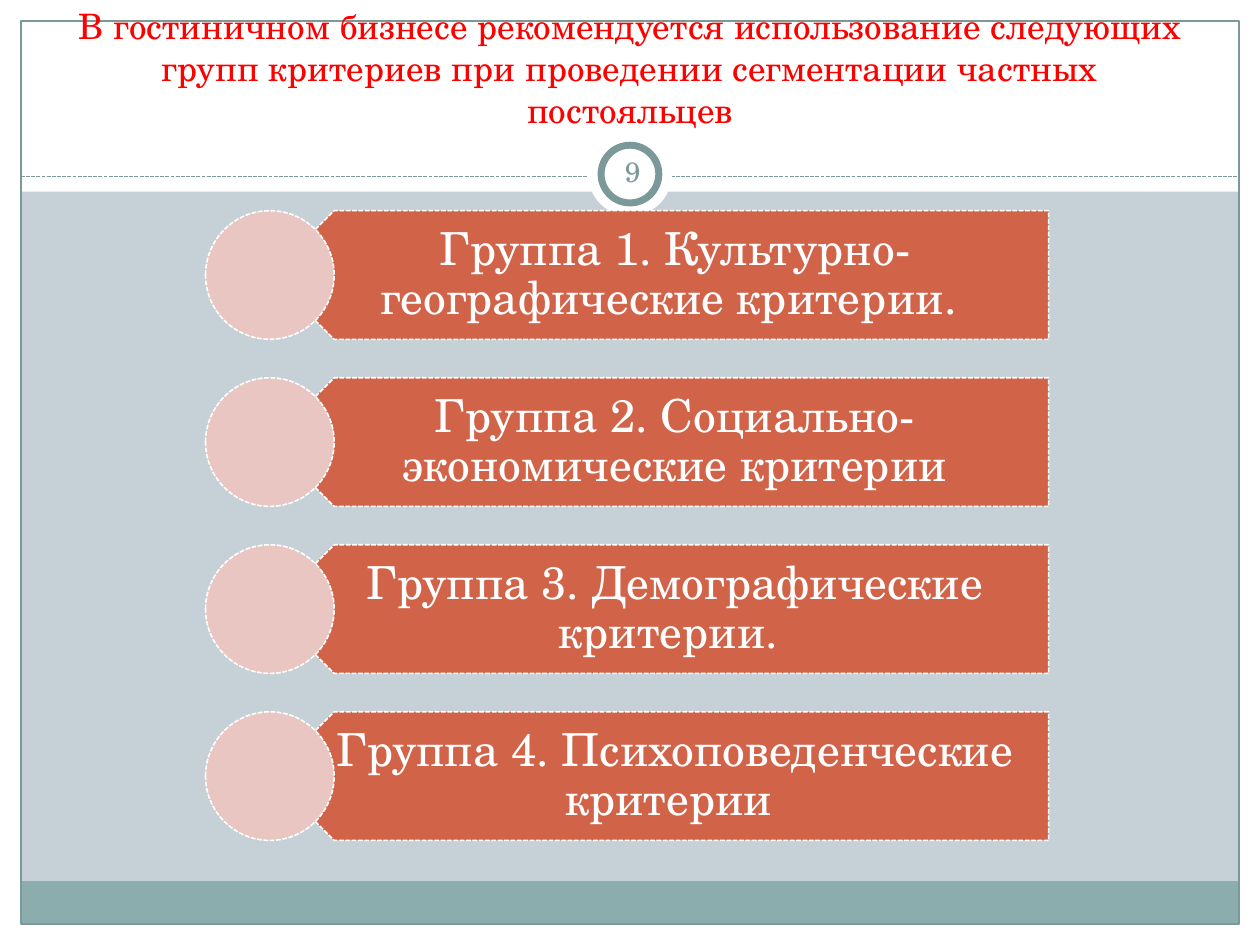
from dataclasses import dataclass

from lxml import etree
from pptx import Presentation
from pptx.dml.color import RGBColor
from pptx.enum.dml import MSO_LINE
from pptx.enum.shapes import MSO_CONNECTOR, MSO_SHAPE
from pptx.enum.text import MSO_ANCHOR, MSO_AUTO_SIZE, PP_ALIGN
from pptx.oxml.ns import qn
from pptx.util import Pt

RECTANGLE, OVAL, PENTAGON = MSO_SHAPE.RECTANGLE, MSO_SHAPE.OVAL, MSO_SHAPE.PENTAGON
STRAIGHT = MSO_CONNECTOR.STRAIGHT
DASHED = MSO_LINE.SQUARE_DOT
MIDDLE, BOTTOM = MSO_ANCHOR.MIDDLE, MSO_ANCHOR.BOTTOM
CENTER = PP_ALIGN.CENTER
NO_AUTOFIT = MSO_AUTO_SIZE.NONE
TITLE_ONLY = 5

TITLE = ("В гостиничном бизнесе рекомендуется использование следующих "
         "групп критериев при проведении сегментации частных постояльцев")
GROUPS = [
    "Группа 1. Культурно-географические критерии. ",
    "Группа 2. Социально-экономические критерии",
    "Группа 3. Демографические критерии. ",
    "Группа 4. Психоповеденческие критерии ",
]
PAGE_NUMBER = "9"


@dataclass(frozen=True)
class Theme:
    font: str = "TeX Gyre Schola"
    background: str = "C5D1D7"
    white: str = "FFFFFF"
    frame: str = "7C999A"
    footer: str = "8CADAE"
    title: str = "FF0000"
    banner: str = "D16349"
    disc: str = "E9C6C1"
    title_size: float = 20
    banner_size: float = 26
    number_size: float = 16


THEME = Theme()

# Lengths in points
WIDTH, HEIGHT = 720, 540
MARGIN = 12
HEADER_HEIGHT = 109.5
FOOTER_HEIGHT = 24.5
DIVIDER_Y = 101
BADGE_CENTER = (360, 99.5)
TITLE_BOX = (24, 18, 672, 60)
NUMBER_BOX = (343.5, 80.6, 36, 34.6)
FIRST_BANNER_TOP, BANNER_PITCH = 120.4, 95.45
BANNER_LEFT, BANNER_WIDTH, BANNER_HEIGHT = 154.2, 445, 73.5
BANNER_INSETS = (32.4, 7.9, 14.4, 7.9)
NUMBER_INSETS = (3.6, 3.6, 3.6, 3.6)


def color(code):
    return RGBColor.from_string(code)


def set_line(line, code, width, dashed=False):
    line.color.rgb = color(code)
    line.width = Pt(width)
    if dashed:
        line.dash_style = DASHED


def add_figure(slide, kind, box, fill=None, line=None):
    """Add a preset shape; line holds the arguments of set_line."""
    shape = slide.shapes.add_shape(kind, *map(Pt, box))
    shape.shadow.inherit = False
    if fill:
        shape.fill.solid()
        shape.fill.fore_color.rgb = color(fill)
    else:
        shape.fill.background()
    if line:
        set_line(shape.line, *line)
    else:
        shape.line.fill.background()
    return shape


def write_text(shape, text, size, code, anchor, insets=None, spacing=None):
    frame = shape.text_frame
    frame.word_wrap = True
    frame.auto_size = NO_AUTOFIT
    frame.vertical_anchor = anchor
    if insets:
        (frame.margin_left, frame.margin_top,
         frame.margin_right, frame.margin_bottom) = map(Pt, insets)
    paragraph = frame.paragraphs[0]
    paragraph.alignment = CENTER
    if spacing:
        paragraph.line_spacing = spacing
    run = paragraph.add_run()
    run.text = text
    run.font.name = THEME.font
    run.font.size = Pt(size)
    run.font.color.rgb = color(code)


def centered_square(center, side):
    return center[0] - side / 2, center[1] - side / 2, side, side


def add_frame(slide):
    inner_width, inner_height = WIDTH - 2 * MARGIN, HEIGHT - 2 * MARGIN
    white_edges = [
        (0, HEIGHT - MARGIN, WIDTH, MARGIN),
        (0, 0, WIDTH, HEADER_HEIGHT),
        (0, 0, MARGIN, HEIGHT),
        (WIDTH - MARGIN, 0, MARGIN, HEIGHT),
    ]
    for box in white_edges:
        add_figure(slide, RECTANGLE, box, THEME.white)
    footer_top = HEIGHT - MARGIN - FOOTER_HEIGHT
    add_figure(slide, RECTANGLE, (MARGIN, footer_top, inner_width, FOOTER_HEIGHT), THEME.footer)
    add_figure(slide, RECTANGLE, (MARGIN, MARGIN, inner_width, inner_height),
               line=(THEME.frame, 0.75))

    divider = slide.shapes.add_connector(
        STRAIGHT, Pt(MARGIN), Pt(DIVIDER_Y), Pt(WIDTH - MARGIN), Pt(DIVIDER_Y))
    set_line(divider.line, THEME.frame, 0.75, dashed=True)
    etree.SubElement(divider._element.spPr, qn("a:effectLst"))

    add_figure(slide, OVAL, centered_square(BADGE_CENTER, 48), THEME.white)
    add_figure(slide, OVAL, centered_square(BADGE_CENTER, 33), THEME.white, (THEME.frame, 4))


def add_title(slide):
    title = slide.shapes.title
    title.left, title.top, title.width, title.height = map(Pt, TITLE_BOX)
    write_text(title, TITLE, THEME.title_size, THEME.title, BOTTOM)
    slide.shapes._spTree.append(title._element)  # in front of the white header


def add_banner(slide, index, text):
    top = FIRST_BANNER_TOP + index * BANNER_PITCH
    box = (BANNER_LEFT, top, BANNER_WIDTH, BANNER_HEIGHT)
    outline = (THEME.white, 0.9, True)
    add_figure(slide, PENTAGON, box, THEME.banner, outline).rotation = 180
    label = slide.shapes.add_textbox(*map(Pt, box))
    write_text(label, text, THEME.banner_size, THEME.white, MIDDLE, BANNER_INSETS, 0.9)
    disc_center = (BANNER_LEFT, top + BANNER_HEIGHT / 2)
    add_figure(slide, OVAL, centered_square(disc_center, BANNER_HEIGHT), THEME.disc, outline)


def main():
    presentation = Presentation()
    presentation.slide_width, presentation.slide_height = Pt(WIDTH), Pt(HEIGHT)
    slide = presentation.slides.add_slide(presentation.slide_layouts[TITLE_ONLY])
    slide.background.fill.solid()
    slide.background.fill.fore_color.rgb = color(THEME.background)

    add_frame(slide)
    add_title(slide)
    for index, text in enumerate(GROUPS):
        add_banner(slide, index, text)
    number = slide.shapes.add_textbox(*map(Pt, NUMBER_BOX))
    write_text(number, PAGE_NUMBER, THEME.number_size, THEME.frame, MIDDLE, NUMBER_INSETS)
    presentation.save("out.pptx")


if __name__ == "__main__":
    main()
